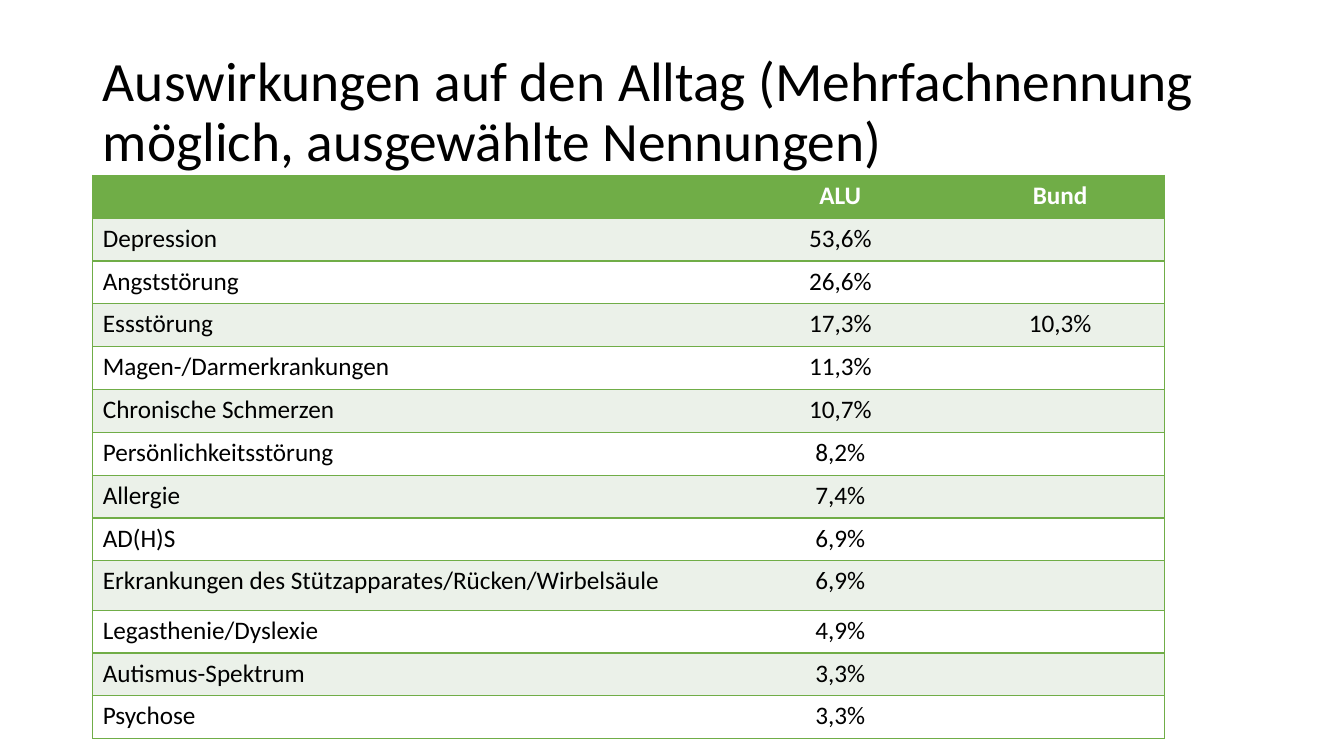
from lxml import etree
from pptx import Presentation
from pptx.dml.color import RGBColor
from pptx.enum.text import MSO_ANCHOR, PP_ALIGN
from pptx.oxml.ns import qn
from pptx.util import Inches, Pt

CENTER, LEFT = PP_ALIGN.CENTER, PP_ALIGN.LEFT
MIDDLE = MSO_ANCHOR.MIDDLE

TITLE = "Auswirkungen auf den Alltag (Mehrfachnennung möglich, ausgewählte Nennungen)"
HEADER = ("", "ALU", "Bund")
CONDITIONS = [
    ("Depression", "53,6%", ""),
    ("Angststörung", "26,6%", ""),
    ("Essstörung", "17,3%", "10,3%"),
    ("Magen-/Darmerkrankungen", "11,3%", ""),
    ("Chronische Schmerzen", "10,7%", ""),
    ("Persönlichkeitsstörung", "8,2%", ""),
    ("Allergie", "7,4%", ""),
    ("AD(H)S", "6,9%", ""),
    ("Erkrankungen des Stützapparates/Rücken/Wirbelsäule", "6,9%", ""),
    ("Legasthenie/Dyslexie", "4,9%", ""),
    ("Autismus-Spektrum", "3,3%", ""),
    ("Psychose", "3,3%", ""),
]
COLORS = {"green": "70AD47", "band": "EBF1E9", "white": "FFFFFF", "text": "000000"}
FONT = "Calibri"
LEFT_EDGE = 0.92
TABLE_TOP, TABLE_HEIGHT = 1.74, 5.59
COLUMN_WIDTHS = (6.27, 2.29, 2.07)
TALL_ROW, TALL_HEIGHT = 9, 0.49


def add_run(paragraph, text, size, color, bold=False):
    run = paragraph.add_run()
    run.text = text
    run.font.name = FONT
    run.font.size = Pt(size)
    run.font.bold = bold
    run.font.color.rgb = RGBColor.from_string(COLORS[color])


def set_borders(cell, visible_sides):
    """Draw green lines on the visible sides and clear the others."""
    properties = cell._tc.get_or_add_tcPr()
    for side in "LRTB":
        line = etree.SubElement(properties, qn(f"a:ln{side}"), w=str(Pt(1)))
        if side in visible_sides:
            fill = etree.SubElement(line, qn("a:solidFill"))
            etree.SubElement(fill, qn("a:srgbClr"), val=COLORS["green"])
        else:
            etree.SubElement(line, qn("a:noFill"))


def add_title(slide):
    title = slide.shapes.title
    title.left, title.top = Inches(LEFT_EDGE), Inches(0.4)
    title.width, title.height = Inches(11.5), Inches(1.45)
    frame = title.text_frame
    frame.word_wrap = True
    frame.vertical_anchor = MIDDLE
    paragraph = frame.paragraphs[0]
    paragraph.alignment = LEFT
    paragraph.line_spacing = 0.9
    add_run(paragraph, TITLE, 39.6, "text")


def add_condition_table(slide):
    rows = [HEADER] + CONDITIONS
    table = slide.shapes.add_table(
        len(rows), len(HEADER), Inches(LEFT_EDGE), Inches(TABLE_TOP),
        Inches(sum(COLUMN_WIDTHS)), Inches(TABLE_HEIGHT)).table
    for column, width in zip(table.columns, COLUMN_WIDTHS):
        column.width = Inches(width)
    row_height = (TABLE_HEIGHT - TALL_HEIGHT) / (len(rows) - 1)
    for r, values in enumerate(rows):
        table.rows[r].height = Inches(TALL_HEIGHT if r == TALL_ROW else row_height)
        is_header = r == 0
        background = "green" if is_header else "band" if r % 2 else "white"
        for c, value in enumerate(values):
            cell = table.cell(r, c)
            set_borders(cell, "TB" + {0: "L", len(HEADER) - 1: "R"}.get(c, ""))
            cell.fill.solid()
            cell.fill.fore_color.rgb = RGBColor.from_string(COLORS[background])
            paragraph = cell.text_frame.paragraphs[0]
            paragraph.alignment = CENTER if c else LEFT
            if value:
                add_run(paragraph, value, 18, "white" if is_header else "text", is_header)


def main():
    presentation = Presentation()
    presentation.slide_width, presentation.slide_height = Inches(13.33), Inches(7.5)
    slide = presentation.slides.add_slide(presentation.slide_layouts[5])
    add_title(slide)
    add_condition_table(slide)
    presentation.save("out.pptx")


if __name__ == "__main__":
    main()
